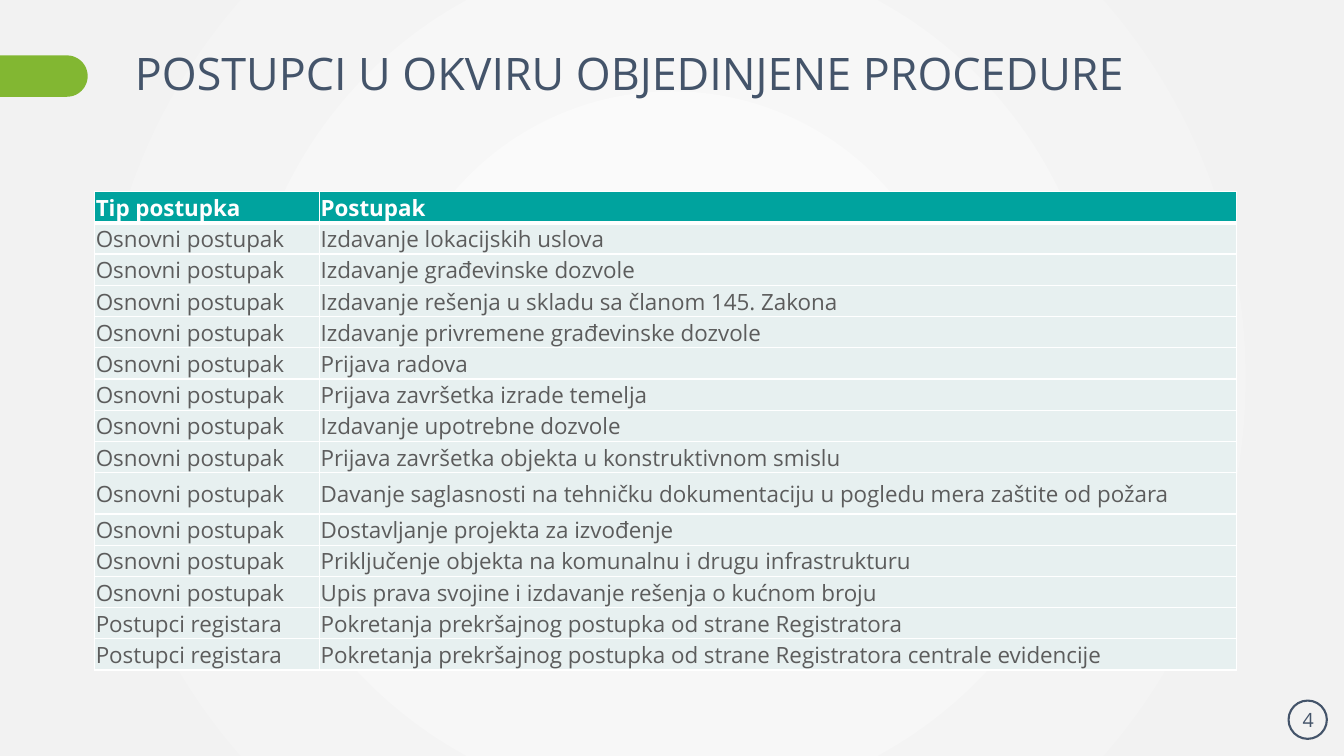
"""Build the slide listing the procedures of the unified permit process."""
from dataclasses import dataclass
from math import cos, pi, sin

from lxml import etree
from pptx import Presentation
from pptx.dml.color import RGBColor
from pptx.enum.shapes import MSO_SHAPE
from pptx.enum.text import MSO_ANCHOR, PP_ALIGN
from pptx.oxml.ns import qn
from pptx.util import Inches, Pt

MIDDLE, BOTTOM = MSO_ANCHOR.MIDDLE, MSO_ANCHOR.BOTTOM
LEFT, CENTER, JUSTIFY = PP_ALIGN.LEFT, PP_ALIGN.CENTER, PP_ALIGN.JUSTIFY
OVAL = MSO_SHAPE.OVAL

COLORS = {
    "white": "FFFFFF", "center": "FCFCFC", "edge": "F2F2F2", "navy": "44546A",
    "green": "82B732", "teal": "00A39E", "pale": "E7F0F0", "gray": "5C5C5C",
}
FONT = "Open Sans"
BASIC, REGISTRY = "Osnovni postupak", "Postupci registara"
HEADER = ("Tip postupka", "Postupak")
PROCEDURES = {
    BASIC: [
        "Izdavanje lokacijskih uslova",
        "Izdavanje građevinske dozvole",
        "Izdavanje rešenja u skladu sa članom 145. Zakona",
        "Izdavanje privremene građevinske dozvole",
        "Prijava radova",
        "Prijava završetka izrade temelja",
        "Izdavanje upotrebne dozvole",
        "Prijava završetka objekta u konstruktivnom smislu",
        "Davanje saglasnosti na tehničku dokumentaciju u pogledu mera zaštite od požara",
        "Dostavljanje projekta za izvođenje",
        "Priključenje objekta na komunalnu i drugu infrastrukturu",
        "Upis prava svojine i izdavanje rešenja o kućnom broju",
    ],
    REGISTRY: [
        "Pokretanja prekršajnog postupka od strane Registratora",
        "Pokretanja prekršajnog postupka od strane Registratora centrale evidencije",
    ],
}
COL_WIDTHS = (2.23, 9.09)
ROW_HEIGHT, TALL_ROW, TALL_HEIGHT = 0.31, 9, 0.41


@dataclass
class Label:
    text: str
    box: tuple
    size: float
    align: int
    spacing: float


@dataclass
class CellStyle:
    fill: str
    color: str
    bold: bool
    anchor: int
    align: int
    top: float
    bottom: float


LABELS = [
    Label("POSTUPCI U OKVIRU OBJEDINJENE PROCEDURE", (1.24, 0.14, 10.86, 1.23), 32, LEFT, 0.9),
    Label("4", (12.75, 6.94, 0.45, 0.4), 14, CENTER, 1.0),
]
HEAD = CellStyle("teal", "white", True, BOTTOM, LEFT, 1, 3)
FIRST = CellStyle("pale", "gray", False, MIDDLE, JUSTIFY, 3, 1)
BODY = CellStyle("pale", "gray", False, MIDDLE, JUSTIFY, 1, 1)


def rgb(name: str) -> RGBColor:
    return RGBColor.from_string(COLORS[name])


def set_all(obj, values: dict) -> None:
    for name, value in values.items():
        setattr(obj, name, value)


def write(tf, text: str, size: float, color: str, align: int, bold: bool = False):
    p = tf.paragraphs[0]
    p.alignment = align
    r = p.add_run()
    r.text = text
    set_all(r.font, {"name": FONT, "size": Pt(size), "bold": bold})
    r.font.color.rgb = rgb(color)
    return p


def paint_background(s) -> None:
    fill = s.background.fill
    fill.gradient()
    for stop, color, position in zip(fill.gradient_stops, ("center", "edge"), (0, 0.93)):
        stop.color.rgb = rgb(color)
        stop.position = position
    grad = s.element.find(".//" + qn("a:gradFill"))
    grad.remove(grad.find(qn("a:lin")))
    circle = etree.SubElement(grad, qn("a:path"), {"path": "circle"})
    etree.SubElement(circle, qn("a:fillToRect"), dict.fromkeys("ltrb", "50000"))


def add_page_ring(s) -> None:
    sp = s.shapes.add_shape(OVAL, *map(Inches, (12.78, 6.95, 0.38, 0.38)))
    sp.shadow.inherit = False
    sp.fill.background()
    sp.line.color.rgb = rgb("navy")
    sp.line.width = Pt(1.5)


def add_side_tab(s, top: float, width: float, height: float, steps: int = 32) -> None:
    radius = height / 2
    arc = [(width - radius + radius * sin(pi * i / steps),
            top + radius - radius * cos(pi * i / steps)) for i in range(steps + 1)]
    outline = s.shapes.build_freeform(0, Inches(top))
    outline.add_line_segments([(Inches(x), Inches(y)) for x, y in arc + [(0, top + height)]])
    sp = outline.convert_to_shape()
    sp.shadow.inherit = False
    sp.fill.solid()
    sp.fill.fore_color.rgb = rgb("green")
    sp.line.fill.background()


def add_label(s, label: Label) -> None:
    tf = s.shapes.add_textbox(*map(Inches, label.box)).text_frame
    set_all(tf, {"word_wrap": True, "vertical_anchor": MIDDLE})
    p = write(tf, label.text, label.size, "navy", label.align)
    p.line_spacing = label.spacing


def fill_cell(cell, text: str, style: CellStyle) -> None:
    set_all(cell, {
        "margin_left": Inches(0.01), "margin_right": Inches(0.01),
        "margin_top": Inches(0.01), "margin_bottom": 0, "vertical_anchor": style.anchor,
    })
    tc_pr = cell._tc.get_or_add_tcPr()
    for side, width in {"L": 1, "R": 1, "T": style.top, "B": style.bottom}.items():
        ln = etree.SubElement(tc_pr, qn(f"a:ln{side}"), {"w": str(Pt(width))})
        solid = etree.SubElement(ln, qn("a:solidFill"))
        etree.SubElement(solid, qn("a:srgbClr"), {"val": COLORS["white"]})
    cell.fill.solid()
    cell.fill.fore_color.rgb = rgb(style.fill)
    write(cell.text_frame, text, 16, style.color, style.align, style.bold)


def add_procedures(s) -> None:
    rows = [HEADER] + [(kind, name) for kind, names in PROCEDURES.items() for name in names]
    heights = [TALL_HEIGHT if i == TALL_ROW else ROW_HEIGHT for i in range(len(rows))]
    box = (0.94, 1.9, sum(COL_WIDTHS), sum(heights))
    table = s.shapes.add_table(len(rows), len(COL_WIDTHS), *map(Inches, box)).table
    table.horz_banding = False
    for column, width in zip(table.columns, COL_WIDTHS):
        column.width = Inches(width)
    for i, (row, height) in enumerate(zip(table.rows, heights)):
        row.height = Inches(height)
        style = {0: HEAD, 1: FIRST}.get(i, BODY)
        for cell, text in zip(row.cells, rows[i]):
            fill_cell(cell, text, style)


def main() -> None:
    prs = Presentation()
    set_all(prs, {"slide_width": Inches(13.33), "slide_height": Inches(7.5)})
    s = prs.slides.add_slide(prs.slide_layouts[6])
    paint_background(s)
    add_page_ring(s)
    add_side_tab(s, 0.55, 0.87, 0.41)
    for label in LABELS:
        add_label(s, label)
    add_procedures(s)
    prs.save("out.pptx")


if __name__ == "__main__":
    main()
